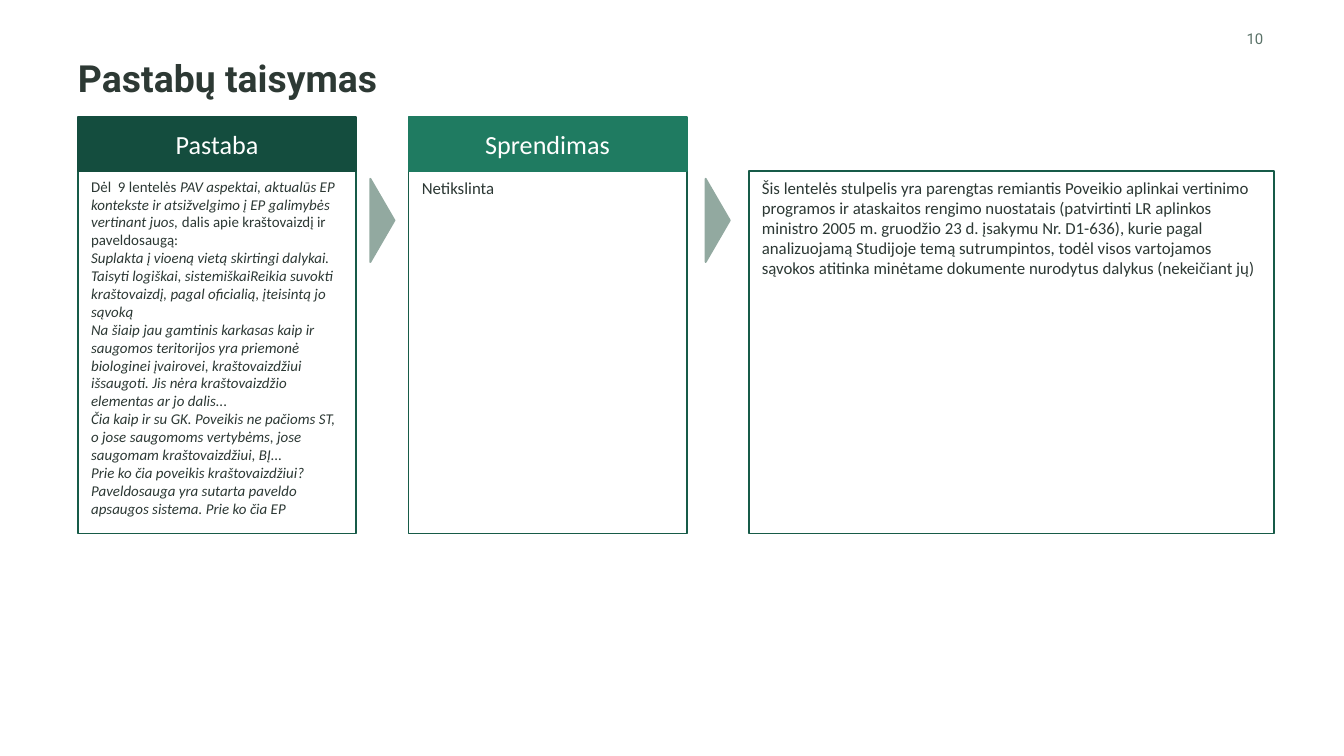
from dataclasses import dataclass

from pptx import Presentation
from pptx.dml.color import RGBColor
from pptx.enum import shapes, text
from pptx.util import Inches, Pt


@dataclass(frozen=True)
class Theme:
    heading_font: str = "Roboto"
    body_font: str = "Calibri"
    title: str = "2D3934"
    number: str = "5A7268"
    body: str = "2C3834"
    header_text: str = "FEFFFE"
    border: str = "175B48"
    dark_green: str = "144D3E"
    green: str = "1F7B61"
    arrow: str = "92A9A0"
    title_size: float = 20
    header_size: float = 14
    body_size: float = 9
    small_size: float = 8


@dataclass(frozen=True)
class Run:
    text: str
    italic: bool = False


@dataclass(frozen=True)
class Column:
    left: float
    width: float
    paragraphs: list[list[Run]]
    size: float
    header: str = ""
    header_fill: str = ""


THEME = Theme()
SLIDE_WIDTH = 10
SLIDE_HEIGHT = SLIDE_WIDTH * 9 / 16
HEADER_TOP, HEADER_HEIGHT = 0.87, 0.4
BODY_TOP, BODY_HEIGHT = HEADER_TOP + HEADER_HEIGHT, 2.7
ARROW_LENGTH, ARROW_SPAN, ARROW_MIDDLE = 0.18, 0.62, 1.64

REMARK = [
    [Run("Dėl  9 lentelės "),
     Run("PAV aspektai, aktualūs EP kontekste ir atsižvelgimo į EP galimybės "
         "vertinant juos, ", italic=True),
     Run("dalis apie kraštovaizdį ir paveldosaugą:")],
    [Run("Suplakta į vioeną vietą skirtingi dalykai. Taisyti logiškai, "
         "sistemiškaiReikia suvokti kraštovaizdį, pagal oficialią, įteisintą jo "
         "sąvoką", italic=True)],
    [Run("Na šiaip jau gamtinis karkasas kaip ir saugomos teritorijos yra "
         "priemonė biologinei įvairovei, kraštovaizdžiui išsaugoti. Jis nėra "
         "kraštovaizdžio elementas ar jo dalis...", italic=True)],
    [Run("Čia kaip ir su GK. Poveikis ne pačioms ST, o jose saugomoms "
         "vertybėms, jose saugomam kraštovaizdžiui, BĮ...", italic=True)],
    [Run("Prie ko čia poveikis kraštovaizdžiui?", italic=True)],
    [Run("Paveldosauga yra sutarta paveldo apsaugos sistema. Prie ko čia EP",
         italic=True)],
]
EXPLANATION = [[Run(
    "Šis lentelės stulpelis yra parengtas remiantis Poveikio aplinkai vertinimo "
    "programos ir ataskaitos rengimo nuostatais (patvirtinti LR aplinkos "
    "ministro 2005 m. gruodžio 23 d. įsakymu Nr. D1-636), kurie pagal "
    "analizuojamą Studijoje temą sutrumpintos, todėl visos vartojamos sąvokos "
    "atitinka minėtame dokumente nurodytus dalykus (nekeičiant jų)")]]

COLUMNS = [
    Column(0.58, 2.07, REMARK, THEME.small_size, "Pastaba", THEME.dark_green),
    Column(3.04, 2.07, [[Run("Netikslinta")]], THEME.body_size,
           "Sprendimas", THEME.green),
    Column(5.57, 3.91, EXPLANATION, THEME.body_size),
]


def write_text(shape, paragraphs: list[list[Run]], *, size: float, color: str,
               font: str = THEME.body_font, bold: bool = False,
               align=text.PP_ALIGN.LEFT, anchor=text.MSO_ANCHOR.TOP,
               margin: float | None = None, line_spacing: float = 1.0) -> None:
    frame = shape.text_frame
    frame.word_wrap = True
    frame.vertical_anchor = anchor
    if margin is not None:
        frame.margin_left = frame.margin_right = Inches(margin)
        frame.margin_top = frame.margin_bottom = Inches(margin)
    for index, runs in enumerate(paragraphs):
        paragraph = frame.add_paragraph() if index else frame.paragraphs[0]
        paragraph.alignment = align
        paragraph.line_spacing = line_spacing
        for item in runs:
            run = paragraph.add_run()
            run.text = item.text
            run.font.name = font
            run.font.size = Pt(size)
            run.font.bold = bold
            run.font.italic = item.italic
            run.font.color.rgb = RGBColor.from_string(color)


def add_box(slide, kind, left: float, top: float, width: float, height: float,
            *, line: str, fill: str = ""):
    shape = slide.shapes.add_shape(kind, Inches(left), Inches(top),
                                   Inches(width), Inches(height))
    shape.shadow.inherit = False
    if fill:
        shape.fill.solid()
        shape.fill.fore_color.rgb = RGBColor.from_string(fill)
    else:
        shape.fill.background()
    shape.line.color.rgb = RGBColor.from_string(line)
    shape.line.width = Pt(1)
    return shape


def add_column(slide, column: Column) -> None:
    rectangle = shapes.MSO_SHAPE.RECTANGLE
    body = add_box(slide, rectangle, column.left, BODY_TOP, column.width,
                   BODY_HEIGHT, line=THEME.border)
    write_text(body, column.paragraphs, size=column.size, color=THEME.body)
    if column.header:
        header = add_box(slide, rectangle, column.left, HEADER_TOP, column.width,
                         HEADER_HEIGHT, line=column.header_fill,
                         fill=column.header_fill)
        write_text(header, [[Run(column.header)]], size=THEME.header_size,
                   color=THEME.header_text, align=text.PP_ALIGN.CENTER,
                   anchor=text.MSO_ANCHOR.MIDDLE)


def add_arrow(slide, before: Column, after: Column) -> None:
    """Point a triangle right, centred in the gap between two columns."""
    center = (before.left + before.width + after.left) / 2
    arrow = add_box(slide, shapes.MSO_SHAPE.ISOSCELES_TRIANGLE,
                    center - ARROW_SPAN / 2, ARROW_MIDDLE - ARROW_LENGTH / 2,
                    ARROW_SPAN, ARROW_LENGTH, line=THEME.arrow, fill=THEME.arrow)
    arrow.rotation = 90


def main() -> None:
    presentation = Presentation()
    presentation.slide_width = Inches(SLIDE_WIDTH)
    presentation.slide_height = Inches(SLIDE_HEIGHT)
    slide = presentation.slides.add_slide(presentation.slide_layouts[6])

    # Title and page number
    title = slide.shapes.add_textbox(Inches(0.58), Inches(0.45),
                                     Inches(8.82), Inches(0.31))
    write_text(title, [[Run("Pastabų taisymas")]], size=THEME.title_size,
               color=THEME.title, font=THEME.heading_font, bold=True,
               margin=0, line_spacing=0.9)
    number = slide.shapes.add_textbox(Inches(7.15), Inches(0.22),
                                      Inches(2.25), Inches(0.13))
    write_text(number, [[Run("10")]], size=THEME.small_size, color=THEME.number,
               font=THEME.heading_font, align=text.PP_ALIGN.RIGHT,
               anchor=text.MSO_ANCHOR.MIDDLE, margin=0)

    # Columns and the arrows between them
    for column in COLUMNS:
        add_column(slide, column)
    for before, after in zip(COLUMNS, COLUMNS[1:]):
        add_arrow(slide, before, after)

    presentation.save("out.pptx")


if __name__ == "__main__":
    main()
